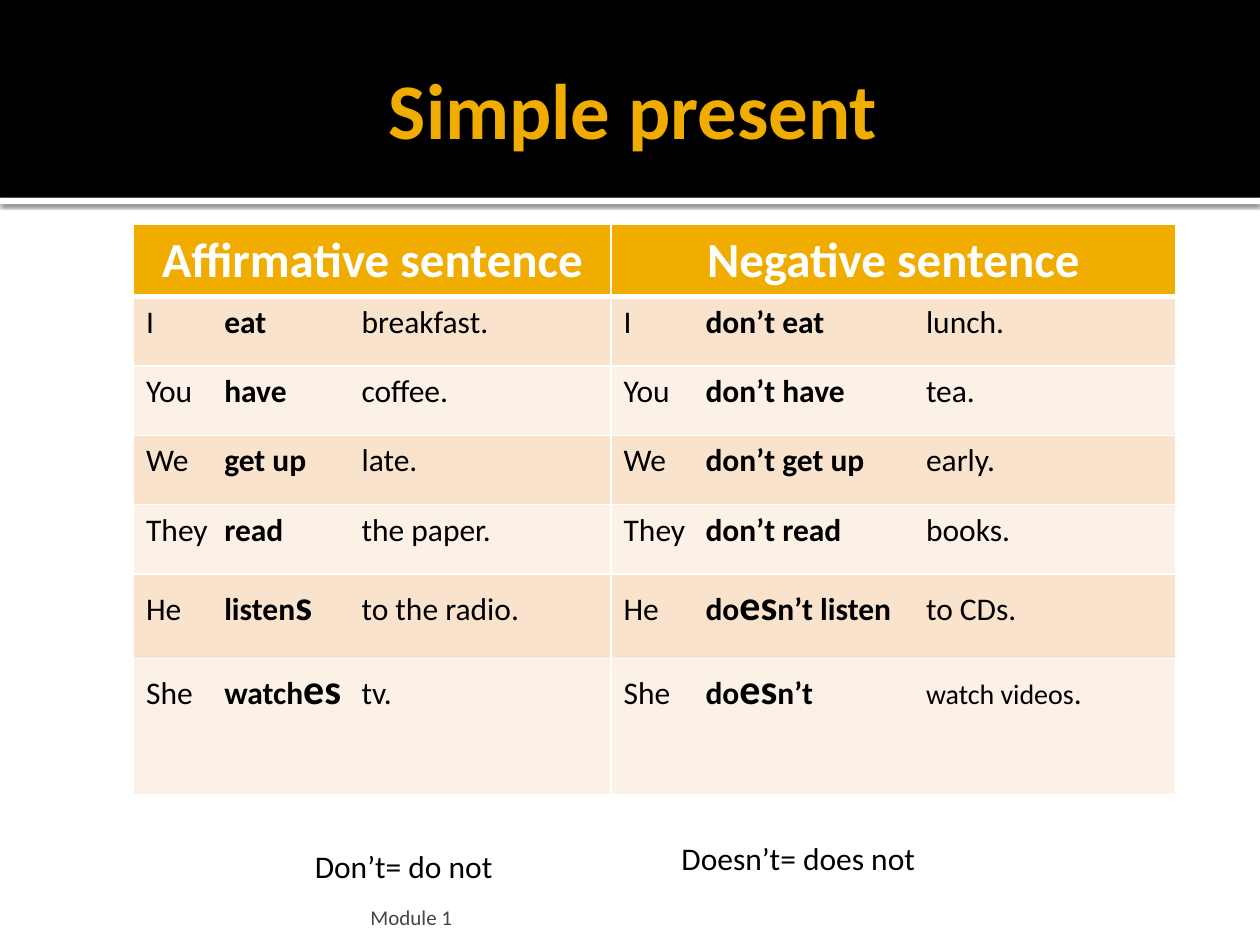
from lxml.etree import SubElement
from pptx import Presentation
from pptx.dml.color import RGBColor
from pptx.enum.shapes import MSO_SHAPE
from pptx.enum.text import MSO_ANCHOR, MSO_AUTO_SIZE, PP_ALIGN
from pptx.oxml.ns import qn
from pptx.util import Inches, Pt

GOLD, WHITE, BLACK, GREY = "F0AD00", "FFFFFF", "000000", "454545"
BANDS = ["F9E3CC", "FCF1E7"]


def color(value):
    return RGBColor.from_string(value)


def write(paragraph, text, size=18, bold=False, fill=BLACK, align=None):
    run = paragraph.add_run()
    run.text = text
    run.font.name = "Calibri"
    run.font.size = Pt(size)
    run.font.bold = bold
    run.font.color.rgb = color(fill)
    if align is not None:
        paragraph.alignment = align


presentation = Presentation()
presentation.slide_width = Inches(10)
presentation.slide_height = Inches(7.5)
slide = presentation.slides.add_slide(presentation.slide_layouts[5])
title = slide.shapes.title

# Header band and the white strip below it, placed behind the title
for top, height, fill in [(0, 1.57, BLACK), (1.57, 0.05, WHITE)]:
    band = slide.shapes.add_shape(
        MSO_SHAPE.RECTANGLE, 0, Inches(top), Inches(10), Inches(height))
    band.fill.solid()
    band.fill.fore_color.rgb = color(fill)
    band.line.fill.background()
    band.shadow.inherit = False
    slide.shapes._spTree.insert(2, band._element)

# Soft shadow under the white strip
effects = band._element.spPr.find(qn("a:effectLst"))
shadow = SubElement(effects, qn("a:outerShdw"), blurRad=str(Pt(2.5)),
                    dist=str(Pt(0.8)), dir="5400000", algn="tl", rotWithShape="0")
shadow_color = SubElement(shadow, qn("a:srgbClr"), val=BLACK)
SubElement(shadow_color, qn("a:alpha"), val="60000")

# Title
title.left, title.top = Inches(0.5), Inches(0.17)
title.width, title.height = Inches(9), Inches(1.37)
frame = title.text_frame
frame.auto_size = MSO_AUTO_SIZE.NONE
frame.vertical_anchor = MSO_ANCHOR.MIDDLE
frame.margin_left = Inches(0.1)
frame.margin_right = frame.margin_top = frame.margin_bottom = Inches(0.05)
write(frame.paragraphs[0], "Simple present", size=45, bold=True, fill=GOLD,
      align=PP_ALIGN.CENTER)

# Sentences: subject, verb pieces (the middle one is enlarged), rest
headings = ["Affirmative sentence", "Negative sentence"]
sentences = [
    [("I", ["eat"], "breakfast."), ("I", ["don’t eat"], "lunch.")],
    [("You", ["have"], "coffee."), ("You", ["don’t have"], "tea.")],
    [("We", ["get up"], "late."), ("We", ["don’t get up"], "early.")],
    [("They", ["read"], "the paper."), ("They", ["don’t read"], "books.")],
    [("He", ["listen", "s"], "to the radio."),
     ("He", ["do", "es", "n’t listen"], "to CDs.")],
    [("She", ["watch", "es"], "tv."),
     ("She", ["do", "es", "n’t"], "watch videos.")],
]
column_widths = [3.79, 4.48]
row_heights = [0.55] * 5 + [0.67, 1.08]
tab_stops = [(0.62, 1.71), (0.65, 2.4)]

# Table
table_frame = slide.shapes.add_table(
    len(row_heights), len(column_widths), Inches(1.06), Inches(1.78),
    Inches(sum(column_widths)), Inches(sum(row_heights)))
table = table_frame.table
for column, width in zip(table.columns, column_widths):
    column.width = Inches(width)
for row, height in zip(table.rows, row_heights):
    row.height = Inches(height)

for row_index in range(len(row_heights)):
    for column_index in range(len(column_widths)):
        cell = table.cell(row_index, column_index)
        paragraph = cell.text_frame.paragraphs[0]

        # White borders, heavier around the header's lower edge
        properties = cell._tc.get_or_add_tcPr()
        for side in ["L", "R", "T", "B"]:
            heavy = (row_index, side) in [(0, "B"), (1, "T")]
            line = SubElement(properties, qn(f"a:ln{side}"),
                              w=str(Pt(3 if heavy else 1)))
            line_fill = SubElement(line, qn("a:solidFill"))
            SubElement(line_fill, qn("a:srgbClr"), val=WHITE)
        cell.fill.solid()

        if row_index == 0:
            cell.fill.fore_color.rgb = color(GOLD)
            write(paragraph, headings[column_index], size=28, bold=True,
                  fill=WHITE, align=PP_ALIGN.CENTER)
            continue

        cell.fill.fore_color.rgb = color(BANDS[(row_index - 1) % 2])
        tabs = SubElement(paragraph._p.get_or_add_pPr(), qn("a:tabLst"))
        for stop in tab_stops[column_index]:
            SubElement(tabs, qn("a:tab"), pos=str(Inches(stop)), algn="l")
        subject, verb, rest = sentences[row_index - 1][column_index]
        write(paragraph, subject + "\t")
        for piece_index, piece in enumerate(verb):
            write(paragraph, piece, size=24 if piece_index == 1 else 18, bold=True)
        write(paragraph, "\t")
        if rest == "watch videos.":
            write(paragraph, rest[:-1], size=16)
            write(paragraph, rest[-1])
        else:
            write(paragraph, rest)

# Notes on the short forms
for text, left, top in [("Don’t= do not", 2.4, 6.67),
                        ("Doesn’t= does not", 5.31, 6.61)]:
    note = slide.shapes.add_textbox(
        Inches(left), Inches(top), Inches(2.68), Inches(0.4))
    note.text_frame.word_wrap = True
    write(note.text_frame.paragraphs[0], text)

# Footer
footer = slide.shapes.add_textbox(
    Inches(2.89), Inches(7.08), Inches(6.02), Inches(0.3))
frame = footer.text_frame
frame.word_wrap = True
frame.vertical_anchor = MSO_ANCHOR.BOTTOM
frame.margin_left = frame.margin_right = frame.margin_top = Inches(0.05)
frame.margin_bottom = 0
write(frame.paragraphs[0], "Module 1", size=12, fill=GREY)

presentation.save("out.pptx")
